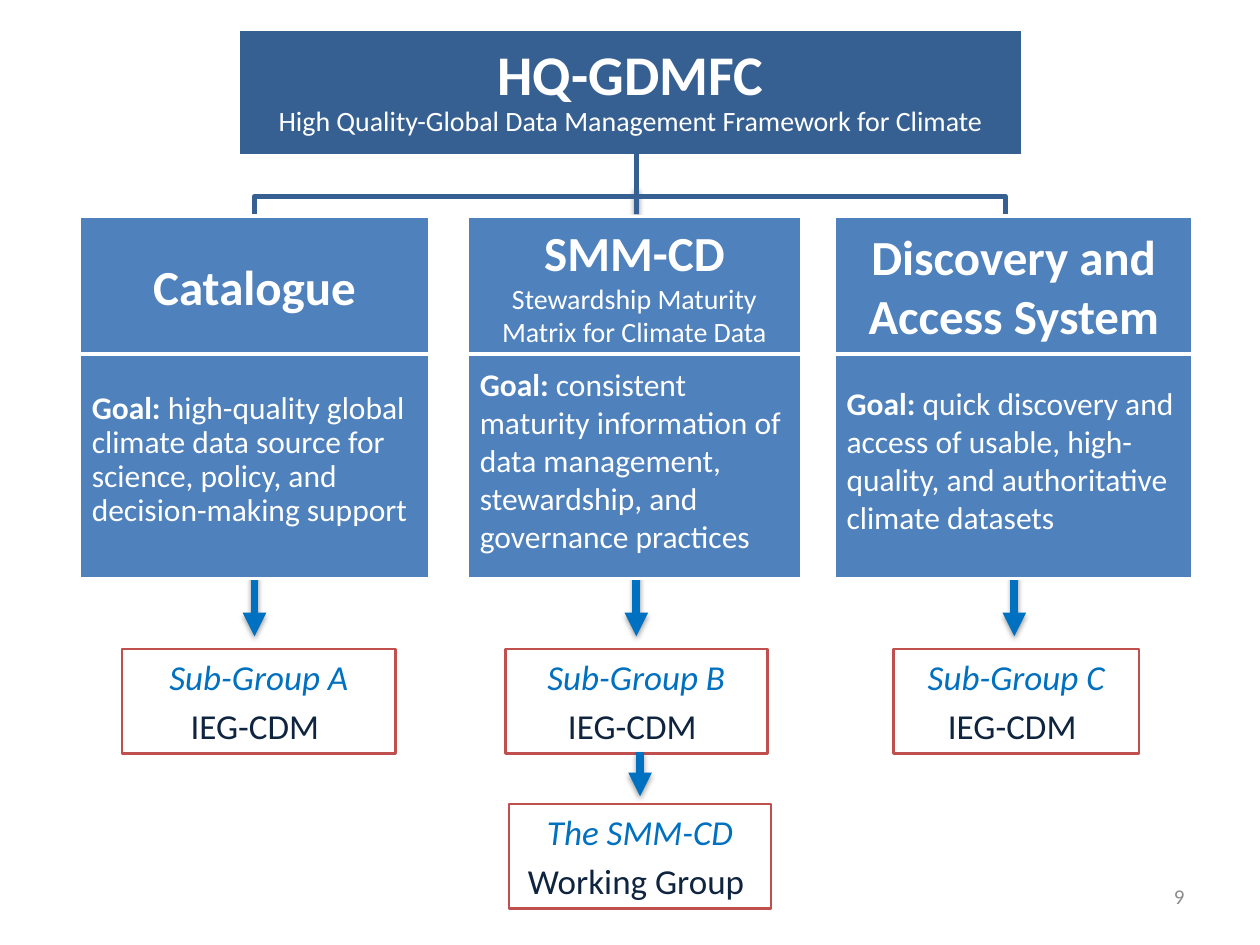
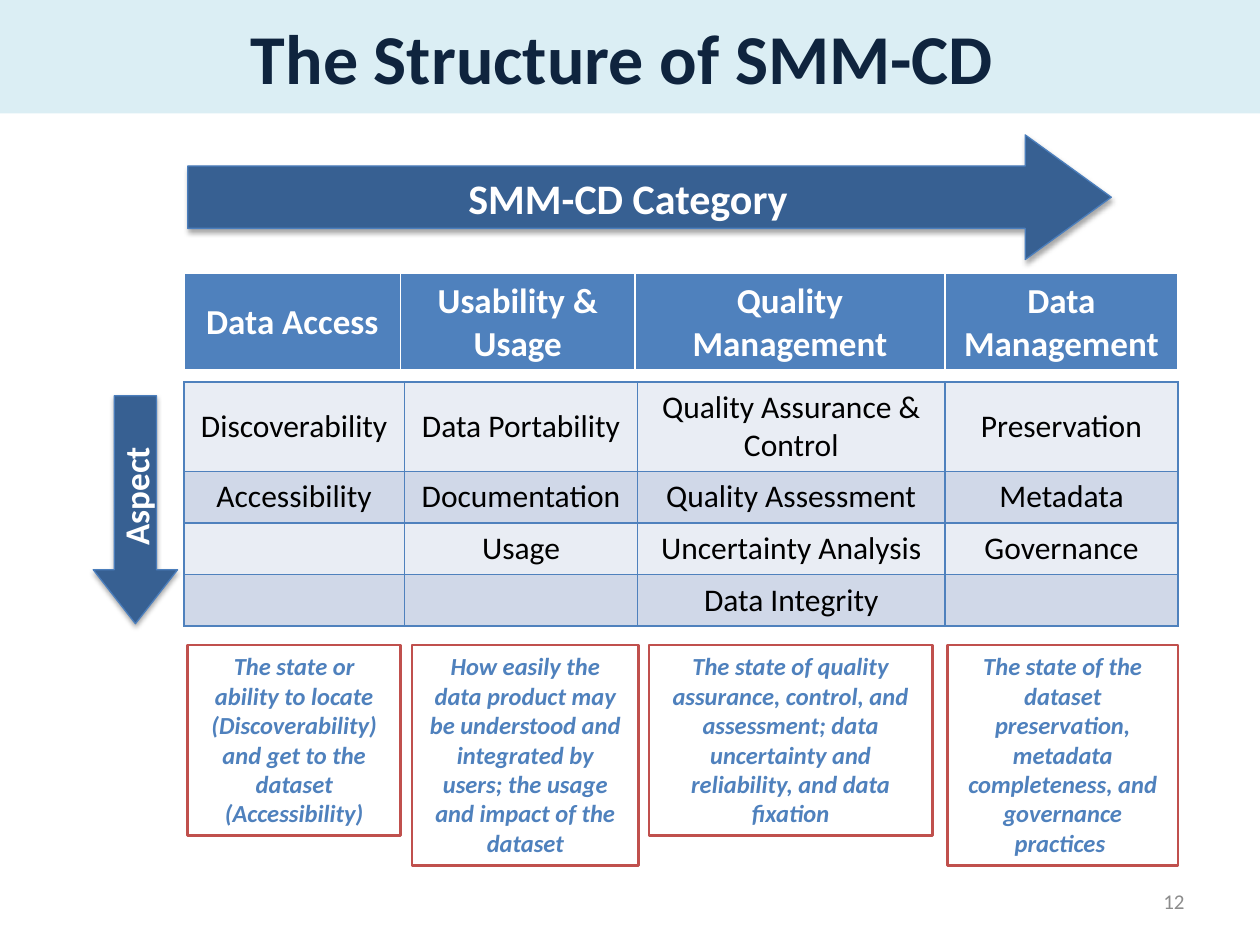
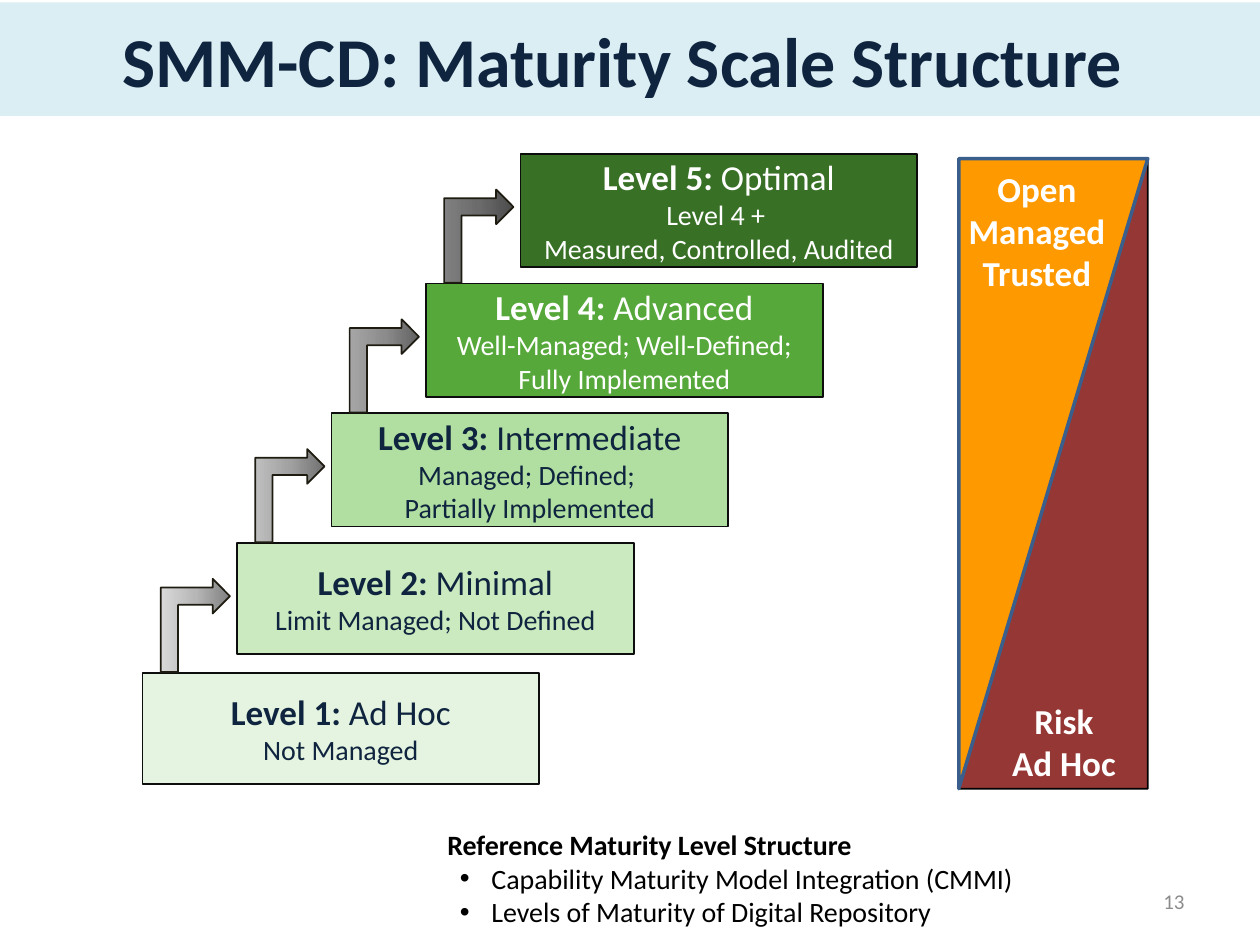
from lxml import etree
from pptx import Presentation
from pptx import util as u
from pptx.dml.color import RGBColor
from pptx.enum import shapes, text
from pptx.oxml import parse_xml
from pptx.oxml.ns import nsdecls, qn

FONT = "Calibri"
COLORS = {
    "white": "FFFFFF", "black": "000000", "navy": "0F243E", "blue": "4F81BD",
    "deep": "376092", "arrow": "0070C0", "arrow_edge": "4B7EBC", "band": "DBEEF4",
    "red": "C0504D", "grey": "8C8C8C", "row_light": "E9EDF4", "row_dark": "D0D8E8",
    "level1": "E5F4E0", "level2": "CBEAC0", "level3": "B0DFA1", "level4": "55A839",
    "level5": "387026", "level_edge": "0D0D0D", "bent_edge": "1E1C11",
    "risk": "953735", "open": "FF9900", "open_edge": "3A5F8C",
}
ALIGN = {"l": text.PP_ALIGN.LEFT, "c": text.PP_ALIGN.CENTER, "r": text.PP_ALIGN.RIGHT}
ANCHOR = {"t": text.MSO_ANCHOR.TOP, "m": text.MSO_ANCHOR.MIDDLE}
SHAPE = shapes.MSO_SHAPE
PLAIN = {"bold": False}

# Slide 1: the framework and its three parts
FRAMEWORK = ["HQ-GDMFC",
             [("High Quality-Global Data Management Framework for Climate",
               {"size": 16, "bold": False})]]
PARTS = [
    {"left": 0.63, "width": 2.78, "axis": 2.02, "head": ["Catalogue"], "spacing": 0.9,
     "goal": "high-quality global climate data source for science, policy, "
             "and decision-making support",
     "group": (0.97, 2.17, "Sub-Group A")},
    {"left": 3.71, "width": 2.65, "axis": 5.05, "spacing": None,
     "head": ["SMM-CD", [("Stewardship Maturity Matrix for Climate Data",
                          {"size": 16, "bold": False})]],
     "goal": "consistent maturity information of data management, stewardship, "
             "and governance practices",
     "group": (4.01, 2.08, "Sub-Group B")},
    {"left": 6.62, "width": 2.85, "axis": 8.05, "head": ["Discovery and Access System"],
     "spacing": None,
     "goal": "quick discovery and access of usable, high-quality, "
             "and authoritative climate datasets",
     "group": (7.09, 1.95, "Sub-Group C")},
]

# Slide 2: categories, aspects and their meaning
CATEGORIES = [["Data Access", "Usability & Usage", "Quality Management", "Data Management"]]
ASPECTS = [
    ["Discoverability", "Data Portability", "Quality Assurance & Control", "Preservation"],
    ["Accessibility", "Documentation", "Quality Assessment", "Metadata"],
    ["", "Usage", "Uncertainty Analysis", "Governance"],
    ["", "", "Data Integrity", ""],
]
MEANINGS = [  # left, width, height, wording
    (1.49, 1.69, 1.51, "The state or ability to locate (Discoverability) and get to the "
                       "dataset (Accessibility)"),
    (3.27, 1.8, 1.75, "How easily the data product may be understood and integrated by users; "
                      "the usage and impact of the dataset"),
    (5.15, 2.25, 1.51, "The state of quality assurance, control, and assessment; "
                       "data uncertainty and reliability, and data fixation"),
    (7.52, 1.83, 1.75, "The state of the dataset preservation, metadata completeness, "
                       "and governance practices "),
]

# Slide 3: maturity levels from the lowest step up
LEVELS = [
    ("Ad Hoc", ["Not Managed"], "navy"),
    ("Minimal", ["Limit Managed; Not Defined"], "navy"),
    ("Intermediate", ["Managed; Defined; ", "Partially Implemented"], "navy"),
    ("Advanced", ["Well-Managed; Well-Defined;", "Fully Implemented"], "white"),
    ("Optimal", ["Level 4 + ", "Measured, Controlled, Audited"], "white"),
]
STEP_SHADES = [
    ("808080", "B7B7B7", "D9D9D9"), ("717171", "A1A1A1", "BFBFBF"),
    ("626262", "8C8C8C", "A6A6A6"), ("4C4C4C", "6B6B6B", "808080"),
]
REFERENCES = [[("Reference Maturity Level Structure", {"bold": True})],
              "Capability Maturity Model Integration (CMMI)",
              "Levels of Maturity of Digital Repository"]


def rgb(name):
    return RGBColor.from_string(COLORS[name])


def box(*lengths):
    return [u.Inches(v) for v in lengths]


def write(s, paras, size=18, color="white", bold=False, italic=False, align="c",
          anchor="m", margins=(0.1, 0.05), spacing=None, after=0, wrap=True):
    """Fill a shape; a paragraph is a string or a list of (text, format changes)."""
    tf = s.text_frame
    tf.word_wrap = wrap
    tf.vertical_anchor = ANCHOR[anchor]
    tf.margin_left = tf.margin_right = u.Inches(margins[0])
    tf.margin_top = tf.margin_bottom = u.Inches(margins[1])
    base = {"size": size, "color": color, "bold": bold, "italic": italic}
    for i, para in enumerate(paras):
        p = tf.add_paragraph() if i else tf.paragraphs[0]
        p.alignment = ALIGN[align]
        if spacing:
            p.line_spacing = spacing
        if after and i < len(paras) - 1:
            p.space_after = u.Pt(after)
        for words, changes in [(para, {})] if isinstance(para, str) else para:
            fmt = {**base, **changes}
            r = p.add_run()
            r.text = words
            r.font.name = FONT
            r.font.size = u.Pt(fmt["size"])
            r.font.bold, r.font.italic = fmt["bold"], fmt["italic"]
            r.font.color.rgb = rgb(fmt["color"])


def cast_shadow(s, alpha, distance):
    props = s.element.spPr
    for old in props.findall(qn("a:effectLst")):
        props.remove(old)
    props.append(parse_xml(
        f'<a:effectLst {nsdecls("a")}><a:outerShdw blurRad="{u.Pt(3.1)}" '
        f'dist="{u.Pt(distance)}" dir="5400000" rotWithShape="0"><a:srgbClr val="000000">'
        f'<a:alpha val="{alpha * 1000}"/></a:srgbClr></a:outerShdw></a:effectLst>'))


def style(s, fill=None, line=None, weight=1):
    s.shadow.inherit = False
    if fill:
        s.fill.solid()
        s.fill.fore_color.rgb = rgb(fill)
    else:
        s.fill.background()
    if line:
        s.line.color.rgb = rgb(line)
        s.line.width = u.Pt(weight)
    else:
        s.line.fill.background()
    return s


def add_shape(slide, kind, at, fill=None, line=None, weight=1, flip=None):
    s = style(slide.shapes.add_shape(kind, *box(*at)), fill, line, weight)
    if flip:
        s.element.spPr.xfrm.set(flip, "1")
    return s


def add_text(slide, at, paras, **fmt):
    s = slide.shapes.add_textbox(*box(*at))
    write(s, paras, **fmt)
    return s


def add_line(slide, x, top, bottom, color, weight, arrow=False):
    s = slide.shapes.add_connector(shapes.MSO_CONNECTOR.STRAIGHT, *box(x, top, x, bottom))
    s.line.color.rgb = rgb(color)
    s.line.width = u.Pt(weight)
    if arrow:
        etree.SubElement(s.line._get_or_add_ln(), qn("a:tailEnd"), type="triangle")
    cast_shadow(s, 38, 1.6)


def add_elbow(slide, start, *points):
    builder = slide.shapes.build_freeform(*box(*start), scale=1.0)
    builder.add_line_segments([box(*pt) for pt in points], close=False)
    style(builder.convert_to_shape(), line="deep", weight=3)


def add_title(slide, words, top=0):
    s = add_shape(slide, SHAPE.RECTANGLE, (0, top, 10, 0.9), "band")
    write(s, [words], size=40, color="navy", bold=True)


def add_number(slide, number, top=6.95):
    add_text(slide, (7.17, top, 2.33, 0.4), [str(number)], size=12, color="grey", align="r")


def red_box(slide, at):
    return add_shape(slide, SHAPE.RECTANGLE, at, line="red", weight=1.5)


def add_group(slide, left, top, width, name, members):
    write(red_box(slide, (left, top, width, 0.83)),
          [[(name, {"color": "arrow", "italic": True})], members],
          size=20, color="navy", anchor="t", after=4)


def add_grid(slide, top, rows, widths, heights, fills, borders, **fmt):
    """Add a table; borders maps each side to (colour, points)."""
    at = box(1.46, top, sum(widths), sum(heights))
    table = slide.shapes.add_table(len(rows), len(widths), *at).table
    for column, width in zip(table.columns, widths):
        column.width = u.Inches(width)
    for i, (row, height) in enumerate(zip(rows, heights)):
        table.rows[i].height = u.Inches(height)
        for j, words in enumerate(row):
            cell = table.cell(i, j)
            cell.vertical_anchor = ANCHOR["m"]
            if words:
                write(cell, [words], **fmt)
            props = cell._tc.get_or_add_tcPr()
            for side, (color, weight) in borders.items():
                props.append(parse_xml(
                    f'<a:ln{side} {nsdecls("a")} w="{u.Pt(weight)}"><a:solidFill>'
                    f'<a:srgbClr val="{COLORS[color]}"/></a:solidFill></a:ln{side}>'))
            cell.fill.solid()
            cell.fill.fore_color.rgb = rgb(fills[i % len(fills)])


def shade(s, stops):
    """Give a shape a three-stop gradient along its own height."""
    s.fill.background()
    old = s.element.spPr.find(qn("a:noFill"))
    marks = "".join(f'<a:gs pos="{i * 50000}"><a:srgbClr val="{c}"/></a:gs>'
                    for i, c in enumerate(stops))
    s.element.spPr.replace(old, parse_xml(
        f'<a:gradFill {nsdecls("a")} rotWithShape="1"><a:gsLst>{marks}</a:gsLst>'
        f'<a:lin ang="5400000" scaled="0"/></a:gradFill>'))


def add_bullet(p):
    props = p._p.get_or_add_pPr()
    props.set("marL", str(u.Inches(0.35)))
    props.set("indent", str(u.Inches(-0.25)))
    etree.SubElement(props, qn("a:buFont"), typeface="Arial")
    etree.SubElement(props, qn("a:buChar"), char="•")


def framework_slide(slide):
    middle = PARTS[1]["axis"]
    for part in PARTS:
        add_line(slide, part["axis"], 4.53, 5.05, "arrow", 4.5, arrow=True)
    add_line(slide, middle, 1.49, 1.7, "deep", 3)
    top_box = add_shape(slide, SHAPE.RECTANGLE, (1.89, 0.23, 6.23, 1.01), "deep", "white", 2)
    write(top_box, FRAMEWORK, size=32, bold=True, margins=(0.02, 0.02), spacing=0.9)
    for x in (7.98, 2.02):
        add_elbow(slide, (middle, 1.21), (middle, 1.56), (x, 1.56), (x, 1.7))
    for part in PARTS:
        left, width = part["left"], part["width"]
        body = add_shape(slide, SHAPE.RECTANGLE, (left, 2.71, width, 1.88), "blue", "white", 2)
        write(body, [[("Goal: ", {"bold": True}), (part["goal"], {})]],
              align="l", spacing=part["spacing"])
        head = add_shape(slide, SHAPE.RECTANGLE, (left, 1.72, width, 1.09), "blue", "white", 2)
        write(head, part["head"], size=28, bold=True)
        group_left, group_width, name = part["group"]
        add_group(slide, group_left, 5.15, group_width, name, "IEG-CDM ")
    add_line(slide, 5.08, 5.97, 6.32, "arrow", 4.5, arrow=True)
    add_group(slide, 4.04, 6.38, 2.08, "The SMM-CD", "Working Group ")
    add_number(slide, 9, top=6.91)


def structure_slide(slide):
    add_title(slide, "The Structure of SMM-CD ")
    for kind, at, head, turn, words, size in [
            (SHAPE.RIGHT_ARROW, (1.49, 1.07, 7.33, 0.99), 0.69, 0, "SMM-CD Category", 24),
            (SHAPE.LEFT_ARROW, (0.17, 3.71, 1.81, 0.67), 0.64, 270, "Aspect", 20)]:
        s = add_shape(slide, kind, at, "deep", "arrow_edge", 0.75)
        s.adjustments[1] = head
        s.rotation = turn
        cast_shadow(s, 35, 1.8)
        write(s, [words], size=size, bold=True)
    add_grid(slide, 3.03, ASPECTS, [1.75, 1.85, 2.44, 1.85], [0.71, 0.41, 0.41, 0.41],
             ["row_light", "row_dark"], dict.fromkeys("LRTB", ("blue", 1)), color="black")
    add_grid(slide, 2.17, CATEGORIES, [1.72, 1.86, 2.46, 1.85], [0.77], ["blue"],
             {**dict.fromkeys("LRT", ("white", 1)), "B": ("white", 3)}, size=20, bold=True)
    for left, width, height, words in MEANINGS:
        write(red_box(slide, (left, 5.12, width, height)), [words],
              size=14, color="blue", bold=True, italic=True, anchor="t")
    add_number(slide, 12)


def scale_slide(slide):
    add_title(slide, "SMM-CD: Maturity Scale Structure ", top=0.02)
    for i, (name, details, color) in enumerate(LEVELS):
        left, top = 1.13 + 0.75 * i, 5.34 - 1.03 * i
        height = 0.88 if len(details) == 1 else 0.9
        step = add_shape(slide, SHAPE.RECTANGLE, (left, top, 3.15, height),
                         f"level{i + 1}", "level_edge")
        title = [(f"Level {i + 1}: ", {"size": 20, "bold": True}), (name, {"size": 20})]
        write(step, [title, *details], size=16, color=color, margins=(0.09, 0.04))
        if i < len(STEP_SHADES):
            bend = add_shape(slide, SHAPE.BENT_UP_ARROW, (left + 0.05, top - 0.65, 0.74, 0.55),
                             line="bent_edge", flip="flipV")
            bend.rotation = 270
            shade(bend, STEP_SHADES[i])
    notes = add_text(slide, (3.46, 6.53, 4.82, 0.93), REFERENCES, size=16, color="black",
                     align="l", anchor="t", margins=(0.09, 0.04))
    for p in notes.text_frame.paragraphs[1:]:
        add_bullet(p)
    bar = (7.61, 1.26, 1.5, 5)
    add_shape(slide, SHAPE.RIGHT_TRIANGLE, bar, "risk", "black", flip="flipH")
    add_shape(slide, SHAPE.RIGHT_TRIANGLE, bar, "open", "open_edge", 2, flip="flipV")
    for at, words in [((7.58, 1.28, 1.3, 1.11), ["Open", "Managed", "Trusted"]),
                      ((7.86, 5.5, 1.17, 0.77), ["Risk", "Ad Hoc"])]:
        add_text(slide, at, words, size=20, bold=True, anchor="t", wrap=False)
    add_number(slide, 13)


def main():
    prs = Presentation()
    prs.slide_width, prs.slide_height = box(10, 7.5)
    for build in (framework_slide, structure_slide, scale_slide):
        build(prs.slides.add_slide(prs.slide_layouts[6]))
    prs.save("out.pptx")


if __name__ == "__main__":
    main()
